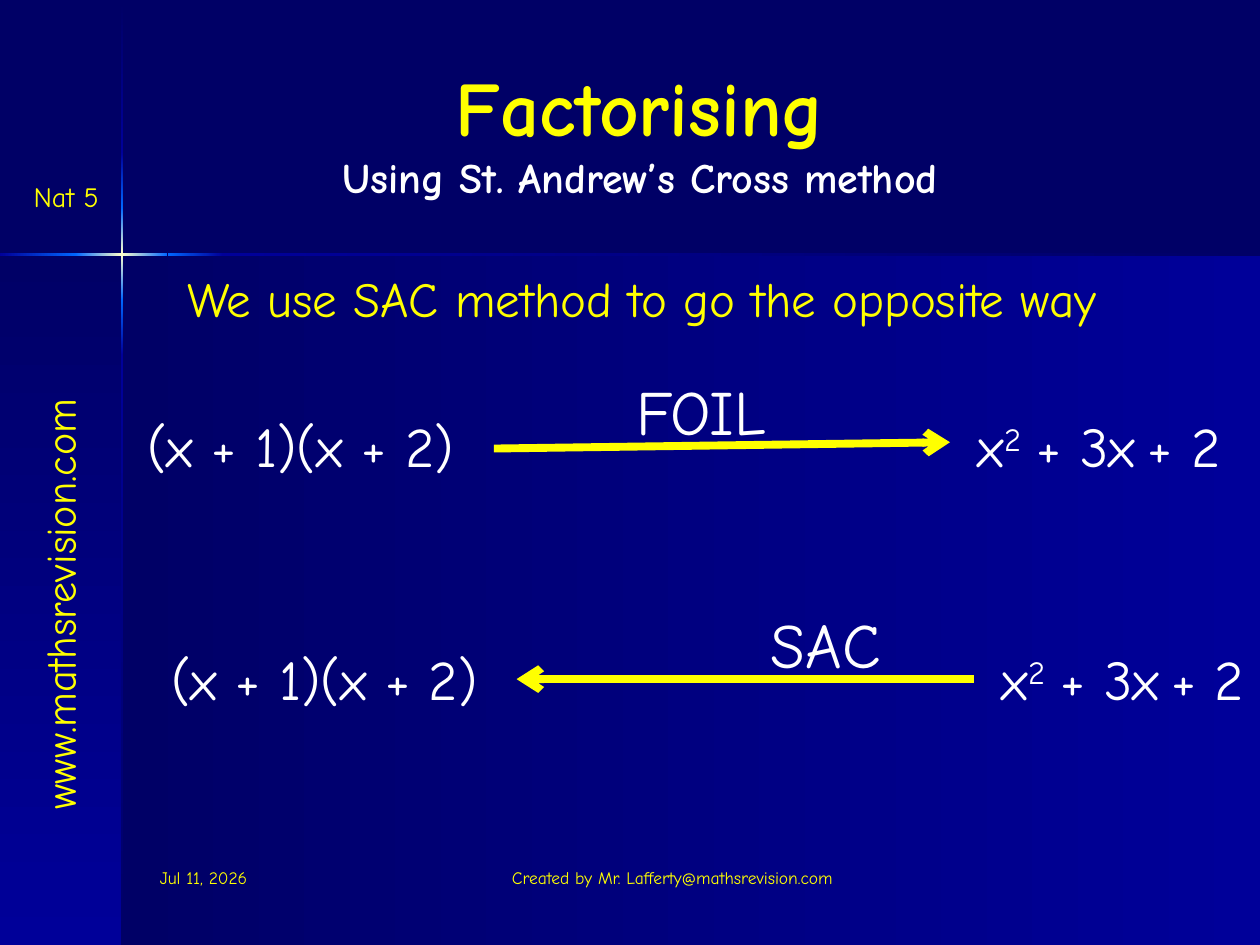
from lxml import etree
from pptx import Presentation
from pptx.dml.color import RGBColor
from pptx.enum.shapes import MSO_CONNECTOR as Connector, MSO_SHAPE as Shape
from pptx.enum.text import MSO_ANCHOR as Anchor, PP_ALIGN as Align
from pptx.oxml.ns import qn
from pptx.util import Inches, Pt

NAVY = RGBColor(0x00, 0x00, 0x66)
BLUE = RGBColor(0x00, 0x00, 0x99)
BRIGHT = RGBColor(0x00, 0x66, 0xFF)
CREAM = RGBColor(0xFF, 0xFF, 0xCC)
YELLOW = RGBColor(0xFF, 0xFF, 0x00)
WHITE = RGBColor(0xFF, 0xFF, 0xFF)

ACROSS, DOWN = 0, 90


class SlideBuilder:
    font_name = "Comic Neue"

    def __init__(self, slide):
        self.slide = slide

    def background(self, color):
        fill = self.slide.background.fill
        fill.solid()
        fill.fore_color.rgb = color

    def gradient_panel(self, left, top, width, height, colors, angle):
        shape = self.slide.shapes.add_shape(
            Shape.RECTANGLE, Inches(left), Inches(top), Inches(width), Inches(height))
        shape.shadow.inherit = False
        shape.line.fill.background()
        shape.fill.gradient()
        shape.fill.gradient_angle = -angle % 360
        # Replace the default stops with evenly spaced ones
        stops = shape.element.spPr.find(qn("a:gradFill")).find(qn("a:gsLst"))
        for stop in list(stops):
            stops.remove(stop)
        for index, color in enumerate(colors):
            position = 100000 * index // (len(colors) - 1)
            stop = etree.SubElement(stops, qn("a:gs"), pos=str(position))
            etree.SubElement(stop, qn("a:srgbClr"), val=str(color))

    def text(self, left, top, width, height, lines, size, color, align=Align.LEFT, rotation=0):
        box = self.slide.shapes.add_textbox(
            Inches(left), Inches(top), Inches(width), Inches(height))
        box.rotation = rotation
        frame = box.text_frame
        frame.word_wrap = True
        frame.text = lines
        for paragraph in frame.paragraphs:
            paragraph.alignment = align
            for run in paragraph.runs:
                self.format_run(run, size, color)
        return frame

    def format_run(self, run, size, color, bold=False):
        run.font.name = self.font_name
        run.font.size = Pt(size)
        run.font.color.rgb = color
        run.font.bold = bold

    def square(self, left, top, width, height, base, size, color):
        paragraph = self.text(left, top, width, height, base, size, color).paragraphs[0]
        power = paragraph.add_run()
        power.text = "2"
        self.format_run(power, size, color)
        power.font._element.set("baseline", "30000")

    def arrow(self, start, end, color, width):
        connector = self.slide.shapes.add_connector(
            Connector.STRAIGHT, *(Inches(value) for value in (*start, *end)))
        connector.line.color.rgb = color
        connector.line.width = Pt(width)
        line = connector.line._get_or_add_ln()
        etree.SubElement(line, qn("a:tailEnd"), type="arrow")
        etree.SubElement(connector.element.spPr, qn("a:effectLst"))

    def equation_row(self, left, top):
        size, height = 32, 0.64
        self.text(left, top, 2.94, height, "(x + 1)(x + 2)", size, WHITE)
        self.square(left + 6.59, top, 0.62, height, "x", size, WHITE)
        self.text(left + 6.91, top, 1.21, height, " + 3x", size, WHITE)
        self.text(left + 7.79, top, 0.95, height, " + 2", size, WHITE)


def main():
    presentation = Presentation()
    presentation.slide_width, presentation.slide_height = Inches(10), Inches(7.5)
    slide = presentation.slides.add_slide(presentation.slide_layouts[6])
    builder = SlideBuilder(slide)
    builder.background(NAVY)

    # Background panels
    builder.gradient_panel(0.97, 2.02, 9.03, 5.48, (NAVY, BLUE), ACROSS)
    builder.gradient_panel(0, 2.02, 0.97, 5.48, (NAVY, BLUE), DOWN)

    # Glowing cross: vertical strip, then horizontal strip
    glow = (BRIGHT, CREAM, BRIGHT)
    for top, height, colors in (
        (0.01, 1.2, (NAVY, BLUE)),
        (2.82, 4.68, (BLUE, NAVY)),
        (2.38, 0.44, (BRIGHT, BLUE)),
        (1.21, 0.44, (BLUE, BRIGHT)),
        (1.65, 0.73, glow),
    ):
        builder.gradient_panel(0.96, top, 0.02, height, colors, DOWN)
    for left, width, colors in (
        (1.77, 8.23, (BLUE, NAVY)),
        (0, 0.61, (BLUE, BRIGHT)),
        (1.33, 0.44, (BRIGHT, BLUE)),
        (0.6, 0.73, glow),
    ):
        builder.gradient_panel(left, 2.01, width, 0.02, colors, ACROSS)

    # Sidebar
    builder.text(-1.43, 4.37, 3.8, 0.5, "www.mathsrevision.com", 24, YELLOW, rotation=270)
    builder.text(0.13, 1.38, 0.79, 0.64, "Nat 5", 16, YELLOW, Align.CENTER)

    # Title and subtitle
    title = builder.text(1.14, 0.41, 7.88, 1.25,
                         "Factorising\nUsing St. Andrew’s Cross method", 44, YELLOW, Align.CENTER)
    title.vertical_anchor = Anchor.MIDDLE
    heading, subtitle = title.paragraphs
    builder.format_run(heading.runs[0], 44, YELLOW, bold=True)
    builder.format_run(subtitle.runs[0], 24, WHITE, bold=True)

    builder.text(1.05, 2.08, 8.09, 0.57, "We use SAC method to go the opposite way",
                 28, YELLOW, Align.CENTER)

    # Expanding
    builder.equation_row(1.07, 3.22)
    builder.arrow((3.92, 3.56), (7.54, 3.51), YELLOW, 4.5)
    builder.text(4.95, 2.91, 1.45, 0.7, "FOIL", 36, WHITE)

    # Factorising
    builder.equation_row(1.26, 5.07)
    builder.arrow((7.73, 5.39), (4.1, 5.39), YELLOW, 4.5)
    builder.text(6.02, 4.76, 1.21, 0.7, "SAC", 36, WHITE)

    # Footer
    builder.text(1.17, 6.83, 2.08, 0.5, "Jul 11, 2026", 10, YELLOW)
    builder.text(3.75, 6.83, 3.17, 0.5, "Created by Mr. Lafferty@mathsrevision.com",
                 10, YELLOW, Align.CENTER)

    presentation.save("out.pptx")


if __name__ == "__main__":
    main()
